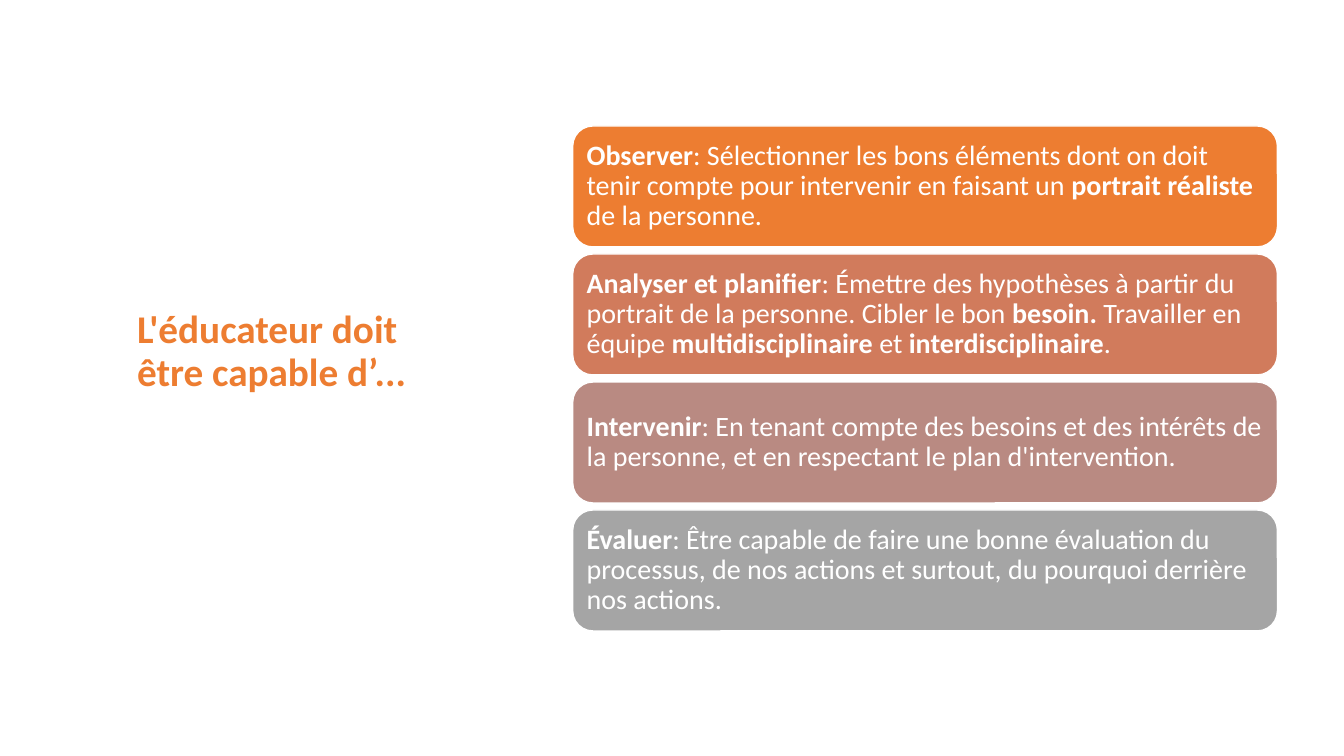
import dataclasses

import pptx
import pptx.dml.color
import pptx.enum.shapes
import pptx.enum.text
import pptx.util


@dataclasses.dataclass(frozen=True)
class Theme:
    font: str = "Calibri"
    title_size: int = 28
    card_size: int = 20
    line_spacing: float = 0.9
    accent: str = "ED7D31"
    white: str = "FFFFFF"
    card_fills: tuple = ("ED7D31", "D17B5C", "B98A82", "A5A5A5")


THEME = Theme()
SLIDE_WIDTH, SLIDE_HEIGHT = 13.33, 7.5
CARD_LEFT, CARD_TOP = 5.68, 1.25
CARD_WIDTH, CARD_HEIGHT = 6.99, 1.2
CARD_PITCH = 1.27
BOLD_MARK = "**"

TITLE = "L'éducateur doit être capable d’..."
CARDS = (
    "**Observer**: Sélectionner les bons éléments dont on doit tenir compte pour "
    "intervenir en faisant un **portrait réaliste** de la personne.",
    "**Analyser et planifier**: Émettre des hypothèses à partir du portrait de la "
    "personne. Cibler le bon **besoin. **Travailler en équipe "
    "**multidisciplinaire** et **interdisciplinaire**.",
    "**Intervenir**: En tenant compte des besoins et des intérêts de la personne, "
    "et en respectant le plan d'intervention.",
    "**Évaluer**: Être capable de faire une bonne évaluation du processus, "
    "de nos actions et surtout, du pourquoi derrière nos actions.",
)


def color(value):
    return pptx.dml.color.RGBColor.from_string(value)


def format_run(run, size, fill, bold):
    run.font.name = THEME.font
    run.font.size = pptx.util.Pt(size)
    run.font.color.rgb = color(fill)
    run.font.bold = bold


def format_paragraph(paragraph):
    paragraph.alignment = pptx.enum.text.PP_ALIGN.LEFT
    paragraph.line_spacing = THEME.line_spacing


def place_title(slide):
    title = slide.shapes.title
    title.left, title.top, title.width, title.height = (
        pptx.util.Inches(length) for length in (1.26, 1.06, 3.22, 5.29)
    )
    frame = title.text_frame
    frame.text = TITLE
    frame.word_wrap = True
    frame.auto_size = pptx.enum.text.MSO_AUTO_SIZE.NONE
    frame.vertical_anchor = pptx.enum.text.MSO_ANCHOR.MIDDLE
    frame.margin_bottom = pptx.util.Inches(0.47)
    paragraph = frame.paragraphs[0]
    format_paragraph(paragraph)
    format_run(paragraph.runs[0], THEME.title_size, THEME.accent, True)


def add_card(slide, row, text, fill):
    card = slide.shapes.add_shape(
        pptx.enum.shapes.MSO_SHAPE.ROUNDED_RECTANGLE,
        pptx.util.Inches(CARD_LEFT),
        pptx.util.Inches(CARD_TOP + row * CARD_PITCH),
        pptx.util.Inches(CARD_WIDTH),
        pptx.util.Inches(CARD_HEIGHT),
    )
    card.shadow.inherit = False
    card.fill.solid()
    card.fill.fore_color.rgb = color(fill)
    card.line.color.rgb = color(THEME.white)
    card.line.width = pptx.util.Pt(1)
    frame = card.text_frame
    frame.word_wrap = True
    frame.vertical_anchor = pptx.enum.text.MSO_ANCHOR.MIDDLE
    frame.margin_left = frame.margin_right = pptx.util.Inches(0.08)
    frame.margin_top = frame.margin_bottom = pptx.util.Inches(0.08)
    paragraph = frame.paragraphs[0]
    format_paragraph(paragraph)
    for position, part in enumerate(text.split(BOLD_MARK)):
        if part:
            run = paragraph.add_run()
            run.text = part
            format_run(run, THEME.card_size, THEME.white, position % 2 == 1)


def main():
    presentation = pptx.Presentation()
    presentation.slide_width = pptx.util.Inches(SLIDE_WIDTH)
    presentation.slide_height = pptx.util.Inches(SLIDE_HEIGHT)
    title_only = presentation.slide_layouts.get_by_name("Title Only")
    slide = presentation.slides.add_slide(title_only)
    place_title(slide)
    for row, (text, fill) in enumerate(zip(CARDS, THEME.card_fills)):
        add_card(slide, row, text, fill)
    presentation.save("out.pptx")


if __name__ == "__main__":
    main()
